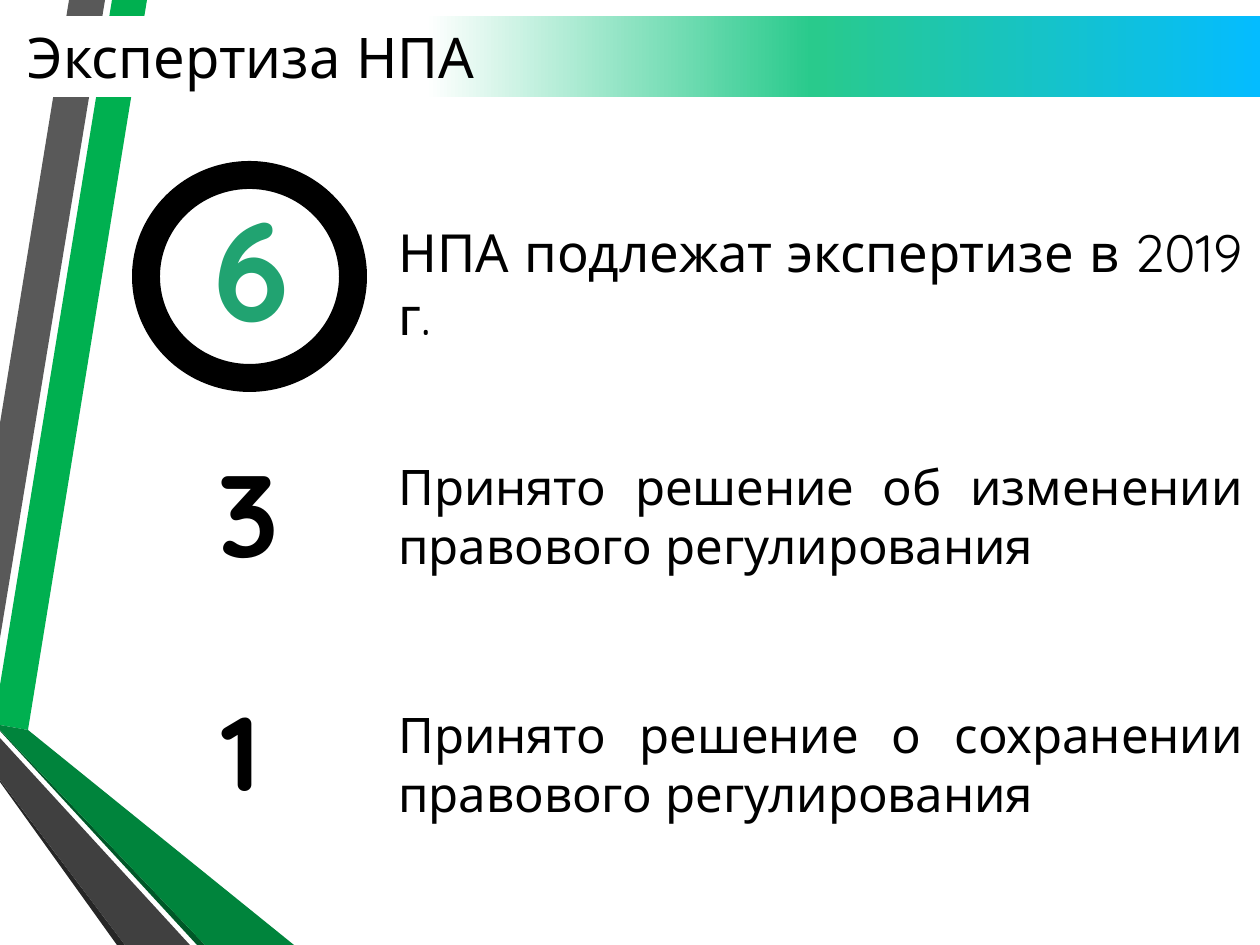
from lxml import etree
from pptx import Presentation
from pptx.dml.color import RGBColor
from pptx.enum.shapes import MSO_SHAPE
from pptx.enum.text import MSO_ANCHOR, MSO_AUTO_SIZE, PP_ALIGN
from pptx.oxml import parse_xml
from pptx.oxml.ns import qn
from pptx.util import Pt

LEFT, CENTER, JUSTIFY = PP_ALIGN.LEFT, PP_ALIGN.CENTER, PP_ALIGN.JUSTIFY
MIDDLE, TOP = MSO_ANCHOR.MIDDLE, MSO_ANCHOR.TOP
GROW, FIXED = MSO_AUTO_SIZE.SHAPE_TO_FIT_TEXT, MSO_AUTO_SIZE.NONE
OVAL = MSO_SHAPE.OVAL
EMU_PER_PX = 914400 / 126
WIDTH, HEIGHT = 1260, 945
FONT = "Quicksand"
BLACK, ACCENT = "000000", "21A371"

TITLE = "Экспертиза НПА"
TITLE_BOX = (15, 16, 1245, 81)
TITLE_STOPS = [(33, "FFFFFF"), (64, "29CA8C"), (100, "04BCFF")]

# Ribbons down the left edge: colour and corners, back to front
RIBBONS = [
    ("00B050", [(0, 685), (0, 725), (28, 730), (147, 0), (112, 0)]),
    ("595959", [(105, 0), (69, 0), (0, 423), (0, 638)]),
    ("262626", [(0, 780), (0, 782), (117, HEIGHT), (125, HEIGHT)]),
    ("005828", [(0, 730), (0, 731), (197, HEIGHT), (205, HEIGHT)]),
    ("00843C", [(0, 730), (205, HEIGHT), (294, HEIGHT), (28, 730), (0, 725)]),
    ("404040", [(0, 780), (125, HEIGHT), (190, HEIGHT), (0, 738)]),
]

RING_BOX = (146, 175, 207, 203)
STATEMENT_LEFT, STATEMENT_WIDTH = 386, 869

# Figure, its box and format; statement, its top, height and size
RESULTS = [
    ("6", (164, 175, 176, 183), {"size": 80, "color": ACCENT},
     "НПА подлежат экспертизе в 2019 г.", 214, 140, 30),
    ("3", (174, 436, 149, 152), {"size": 66, "outline": 0.75},
     "Принято решение об изменении правового регулирования", 450, 131, 28),
    ("1", (171, 680, 139, 140), {"size": 60},
     "Принято решение о сохранении правового регулирования", 698, 131, 28),
]


def px(value):
    return round(value * EMU_PER_PX)


def rgb(color):
    return RGBColor.from_string(color)


def place(shape, box):
    for side, value in zip(("left", "top", "width", "height"), box):
        setattr(shape, side, px(value))


def write(frame, text, size, align, color=BLACK, bold=False, outline=None,
          anchor=TOP, fit=GROW):
    frame_format = {"word_wrap": True, "auto_size": fit, "vertical_anchor": anchor}
    for name, value in frame_format.items():
        setattr(frame, name, value)
    paragraph = frame.paragraphs[0]
    paragraph.alignment = align
    run = paragraph.add_run()
    run.text = text
    for name, value in {"name": FONT, "size": Pt(size), "bold": bold}.items():
        setattr(run.font, name, value)
    run.font.color.rgb = rgb(color)
    if outline:
        line = etree.Element(qn("a:ln"), w=str(Pt(outline)))
        fill = etree.SubElement(line, qn("a:solidFill"))
        etree.SubElement(fill, qn("a:srgbClr"), val=color)
        run.font.fill  # the run properties exist once a font is set
        run._r.get_or_add_rPr().insert(0, line)


def add_text(slide, box, *args, **formats):
    text_box = slide.shapes.add_textbox(*map(px, box))
    write(text_box.text_frame, *args, **formats)


def add_ribbon(slide, color, corners):
    builder = slide.shapes.build_freeform(*corners[0], scale=EMU_PER_PX)
    builder.add_line_segments(corners[1:], close=True)
    ribbon = builder.convert_to_shape()
    ribbon.shadow.inherit = False
    ribbon.fill.solid()
    ribbon.fill.fore_color.rgb = rgb(color)
    ribbon.line.fill.background()


def fill_gradient(shape, stops):
    shape.fill.gradient()
    shape.fill.gradient_angle = 0
    stop_list = shape.element.spPr.find(".//" + qn("a:gsLst"))
    for stop in list(stop_list):
        stop_list.remove(stop)
    for percent, color in stops:
        stop = etree.SubElement(stop_list, qn("a:gs"), pos=str(percent * 1000))
        etree.SubElement(stop, qn("a:srgbClr"), val=color)


def main():
    deck = Presentation()
    deck.slide_width, deck.slide_height = px(WIDTH), px(HEIGHT)
    slide = deck.slides.add_slide(deck.slide_layouts[5])

    for color, corners in RIBBONS:
        add_ribbon(slide, color, corners)

    # Title bar, raised above the ribbons
    title = slide.shapes.title
    place(title, TITLE_BOX)
    fill_gradient(title, TITLE_STOPS)
    write(title.text_frame, TITLE, 32, LEFT, anchor=MIDDLE, fit=FIXED)
    slide.shapes.element.append(title.element)

    # Ring around the leading figure
    ring = slide.shapes.add_shape(OVAL, *map(px, RING_BOX))
    ring.shadow.inherit = False
    ring.fill.background()
    ring.line.color.rgb = rgb(BLACK)
    ring.line.width = Pt(16)

    # Figures and their statements
    for figure, box, formats, statement, top, height, size in RESULTS:
        add_text(slide, box, figure, align=CENTER, bold=True, **formats)
        add_text(slide, (STATEMENT_LEFT, top, STATEMENT_WIDTH, height),
                 statement, size, JUSTIFY)

    deck.save("out.pptx")


if __name__ == "__main__":
    main()
